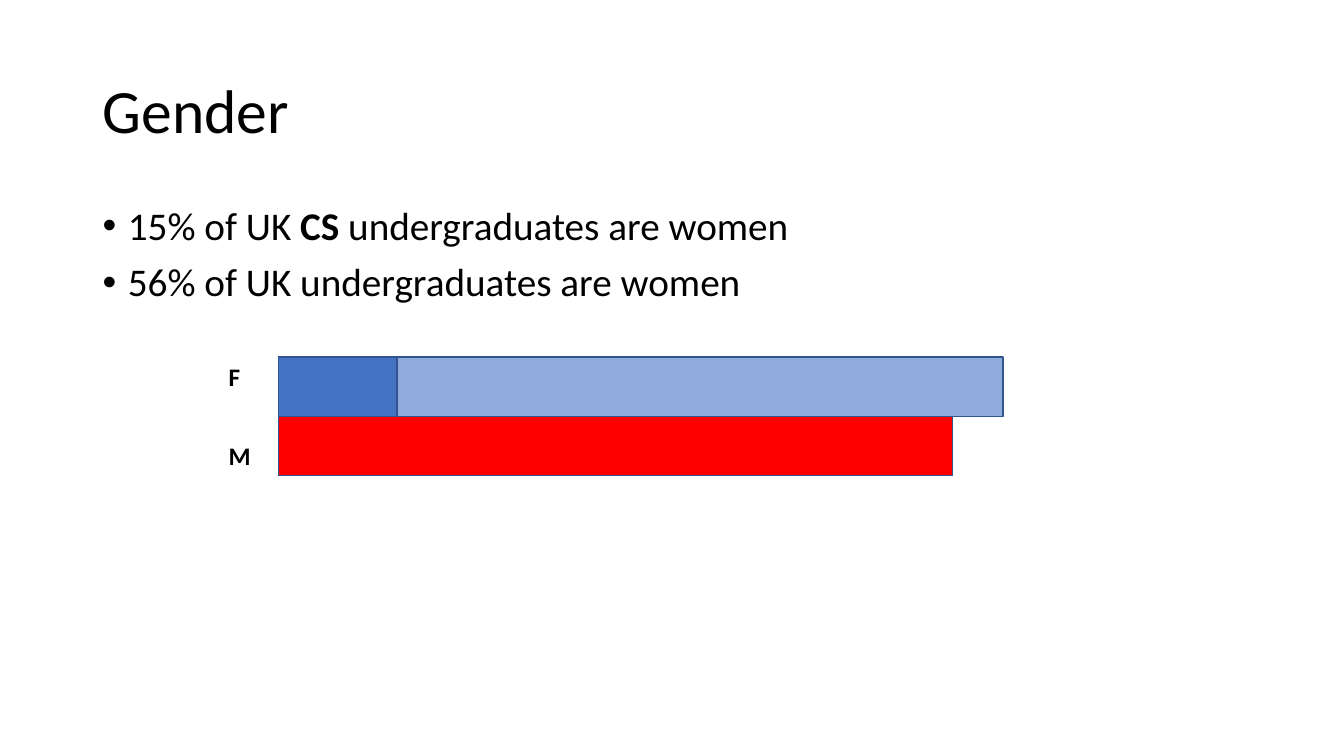
from lxml.etree import SubElement
from pptx import Presentation
from pptx.dml.color import RGBColor
from pptx.enum.shapes import MSO_SHAPE
from pptx.enum.text import MSO_ANCHOR
from pptx.oxml.ns import qn
from pptx.util import Inches, Pt

COLORS = {"text": "000000", "women": "8FAADC", "women_cs": "4472C4",
          "men": "FF0000", "outline": "325491"}
FONT = "Calibri"
WIDTH, HEIGHT = 13.33, 7.5


def add_text_box(slide, box):
    text_frame = slide.shapes.add_textbox(*map(Inches, box)).text_frame
    text_frame.word_wrap = True
    return text_frame


def format_run(run, size, bold=False):
    run.font.name = FONT
    run.font.size = Pt(size)
    run.font.bold = bold
    run.font.color.rgb = RGBColor.from_string(COLORS["text"])


def add_bullet(paragraph, indent):
    properties = paragraph._p.get_or_add_pPr()
    properties.set("marL", str(Inches(indent)))
    properties.set("indent", str(-Inches(indent)))
    SubElement(properties, qn("a:buFont"), typeface="Arial")
    SubElement(properties, qn("a:buChar"), char="•")


def add_title(slide, box, text):
    text_frame = add_text_box(slide, box)
    text_frame.vertical_anchor = MSO_ANCHOR.MIDDLE
    paragraph = text_frame.paragraphs[0]
    paragraph.text = text
    paragraph.line_spacing = 0.9
    format_run(paragraph.runs[0], 44)


def add_bullets(slide, box, items):
    """Each item is a list of (text, bold) runs."""
    text_frame = add_text_box(slide, box)
    for index, item in enumerate(items):
        paragraph = text_frame.add_paragraph() if index else text_frame.paragraphs[0]
        add_bullet(paragraph, 0.25)
        paragraph.line_spacing = 0.9
        paragraph.space_before = Pt(10 if index else 0)
        for text, bold in item:
            run = paragraph.add_run()
            run.text = text
            format_run(run, 28, bold)


def add_bar(slide, box, color):
    bar = slide.shapes.add_shape(MSO_SHAPE.RECTANGLE, *map(Inches, box))
    bar.shadow.inherit = False
    bar.fill.solid()
    bar.fill.fore_color.rgb = RGBColor.from_string(COLORS[color])
    bar.line.color.rgb = RGBColor.from_string(COLORS["outline"])
    bar.line.width = Pt(1)


def add_gender_bars(slide, box):
    left, top, width, height = box
    row = height / 2
    # Bars: row, share of the full width, colour
    for index, share, color in [(0, 1, "women"), (0, 0.164, "women_cs"), (1, 0.93, "men")]:
        add_bar(slide, (left, top + index * row, width * share, row), color)
    # Labels: the first at the top of the box, the last at its bottom
    label_height = 0.4
    for text, label_top in [("F", top), ("M", top + height - label_height)]:
        paragraph = add_text_box(slide, (left - row, label_top, 0.38, label_height)).paragraphs[0]
        paragraph.text = text
        format_run(paragraph.runs[0], 18, True)


def main():
    presentation = Presentation()
    presentation.slide_width = Inches(WIDTH)
    presentation.slide_height = Inches(HEIGHT)
    slide = presentation.slides.add_slide(presentation.slide_layouts[6])

    margin = 0.92
    content_width = WIDTH - 2 * margin
    add_title(slide, (margin, 0.4, content_width, 1.45), "Gender")
    add_bullets(slide, (margin, 2, content_width, 4.38), [
        [("15% of UK ", False), ("CS", True), (" undergraduates are women", False)],
        [("56% of UK undergraduates are women", False)],
    ])
    add_gender_bars(slide, (2.76, 3.54, 7.19, 1.18))
    presentation.save("out.pptx")


if __name__ == "__main__":
    main()
